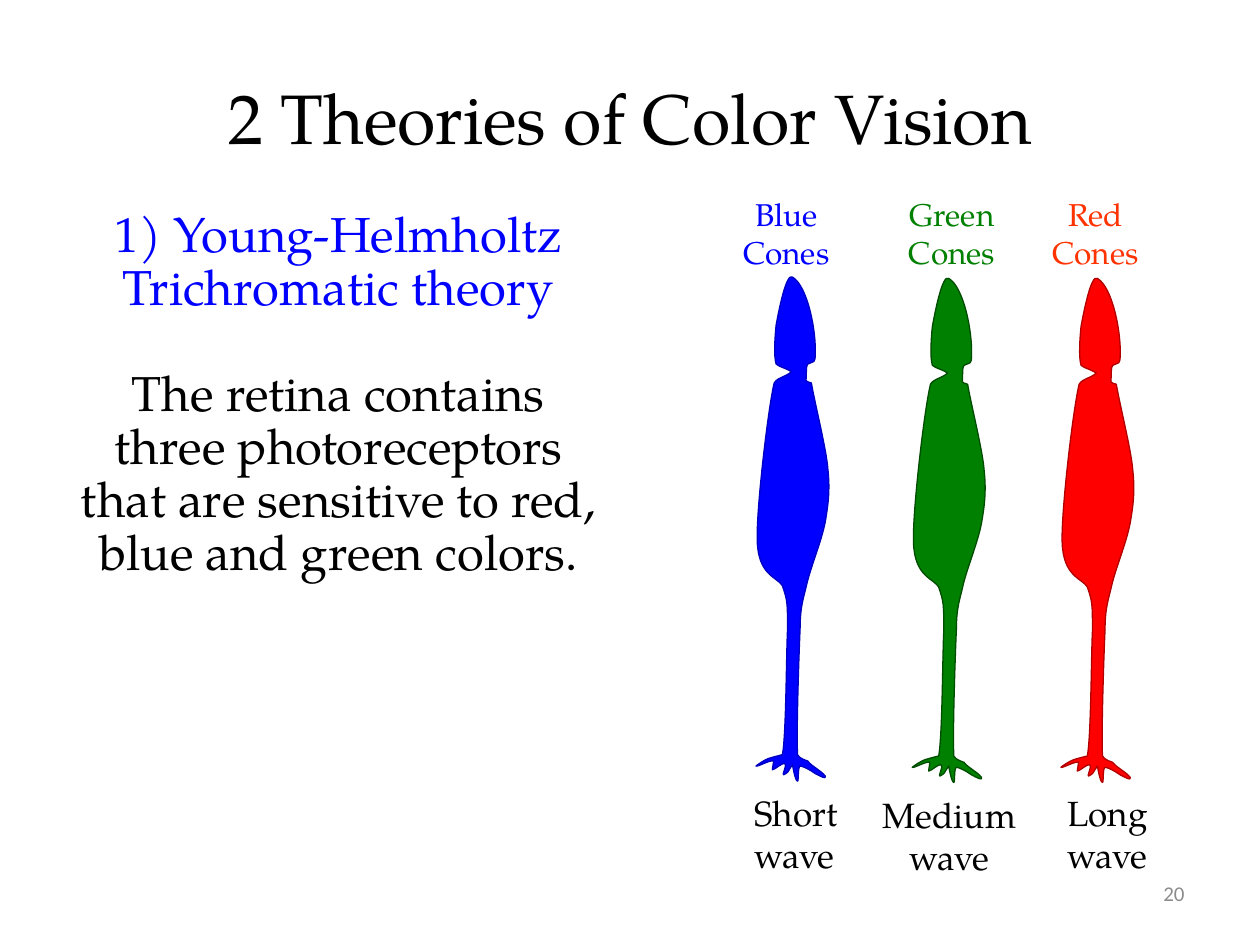
from lxml.etree import SubElement
from pptx import Presentation
from pptx.dml.color import RGBColor
from pptx.enum.text import MSO_ANCHOR, MSO_AUTO_SIZE, PP_ALIGN
from pptx.oxml.ns import qn
from pptx.util import Inches, Pt

UNIT = Inches(0.1)  # one column or row of the 100 x 75 grid

# Cone outline in tenths of a grid unit: a start, then two handles and an end per curve.
CONE_WIDTH, CONE_HEIGHT = 59, 404
CONE_START = (33, 383)
CONE_CURVES = [
    # root
    (34, 386, 41, 388, 41, 388), (45, 393, 51, 395, 55, 400),
    (56, 403, 51, 400, 47, 398), (43, 395, 37, 392, 35, 392),
    (33, 393, 34, 404, 33, 404), (31, 404, 29, 391, 29, 391),
    (24, 398, 27, 396, 22, 399), (20, 400, 25, 391, 23, 390),
    (21, 389, 15, 395, 13, 395), (13, 394, 14, 389, 14, 388),
    (11, 387, 1, 393, 0, 392), (1, 391, 7, 387, 10, 386),
    (13, 385, 21, 383, 21, 383),
    # left side of the stem and body
    (24, 366, 24, 304, 25, 284), (25, 262, 25, 261, 21, 249),
    (17, 242, 2, 241, 1, 214), (0, 191, 9, 113, 14, 90),
    (14, 84, 25, 83, 28, 79),
    # tip
    (21, 75, 20, 76, 16, 73), (14, 67, 15, 51, 16, 42),
    (18, 31, 24, 0, 29, 4), (41, 11, 48, 47, 47, 66),
    (47, 77, 40, 67, 40, 78), (40, 88, 38, 86, 44, 88),
    # right side of the body and stem
    (46, 101, 56, 141, 57, 156), (59, 174, 57, 186, 55, 198),
    (52, 214, 43, 235, 40, 249), (38, 258, 35, 265, 35, 283),
    (34, 306, 32, 365, 33, 383),
]


def color(hex_code):
    return RGBColor.from_string(hex_code)


def grid(*lengths):
    return [round(length * UNIT) for length in lengths]


def set_points(step, coordinates):
    """Replace the points of one outline step by the given x, y, x, y, ..."""
    for point in list(step):
        step.remove(point)
    for x, y in zip(coordinates[::2], coordinates[1::2]):
        SubElement(step, qn("a:pt"), x=str(x), y=str(y))


class ConeSlide:
    font = "TeX Gyre Pagella"
    black, blue, green = "000000", "0000FF", "008000"

    def __init__(self, deck):
        self.slide = deck.slides.add_slide(deck.slide_layouts[6])

    def text(self, box, lines, size, align=PP_ALIGN.CENTER, anchor=MSO_ANCHOR.MIDDLE,
             wrap=True, grow=False, font=None, spacing=None, gap=0):
        """Add a text box; lines holds one (wording, colour) pair per paragraph."""
        frame = self.slide.shapes.add_textbox(*grid(*box)).text_frame
        frame.word_wrap = wrap
        frame.vertical_anchor = anchor
        frame.auto_size = MSO_AUTO_SIZE.SHAPE_TO_FIT_TEXT if grow else MSO_AUTO_SIZE.NONE
        for index, (wording, hue) in enumerate(lines):
            paragraph = frame.add_paragraph() if index else frame.paragraphs[0]
            paragraph.alignment = align
            paragraph.line_spacing = spacing
            if index:
                paragraph.space_before = Pt(gap)
            run = paragraph.add_run()
            run.text = wording
            run.font.name = font or self.font
            run.font.size = Pt(size)
            run.font.color.rgb = color(hue)

    def label(self, box, words, size, hue, align=PP_ALIGN.CENTER):
        self.text(box, [(word, hue) for word in words], size, align,
                  MSO_ANCHOR.TOP, wrap=False, grow=True)

    def cone(self, left, top, fill, outline):
        """Add a cone whose straight steps are turned into Bézier curves."""
        builder = self.slide.shapes.build_freeform(*CONE_START, scale=UNIT / 10)
        builder.add_line_segments([curve[4:] for curve in CONE_CURVES], close=True)
        cone = builder.convert_to_shape()
        contour = next(cone._element.iter(qn("a:path")))
        contour.set("w", str(CONE_WIDTH))
        contour.set("h", str(CONE_HEIGHT))
        set_points(contour.find(qn("a:moveTo")), CONE_START)
        for step, curve in zip(contour.findall(qn("a:lnTo")), CONE_CURVES):
            step.tag = qn("a:cubicBezTo")
            set_points(step, curve)
        cone.left, cone.top, cone.width, cone.height = grid(
            left, top, CONE_WIDTH / 10, CONE_HEIGHT / 10)
        cone.shadow.inherit = False
        cone.fill.solid()
        cone.fill.fore_color.rgb = color(fill)
        cone.line.color.rgb = color(outline)
        cone.line.width = Pt(0.75)


def main():
    deck = Presentation()
    deck.slide_width, deck.slide_height = grid(100, 75)
    page = ConeSlide(deck)

    page.text((5, 3, 90, 12.5), [("2 Theories of Color Vision", page.black)], 40)
    page.text((5, 16, 43.7, 30.8), [
        ("1) Young-Helmholtz Trichromatic theory", page.blue),
        ("The retina contains three photoreceptors that are sensitive to red, "
         "blue and green colors.", page.black),
    ], 28, grow=True, spacing=0.9, gap=30)

    # name, label left, label colour, cone left, cone top, fill, outline
    cones = [
        ("Blue", 57.95, page.blue, 60, 21.6, page.blue, "0000C0"),
        ("Green", 71.1, page.green, 72.4, 21.7, page.green, "004C00"),
        ("Red", 82.5, "FF3300", 84.2, 21.7, "FF0000", "B00000"),
    ]
    for name, label_left, hue, left, top, fill, outline in cones:
        page.label((label_left, 15, 8.9, 7), (name, "Cones"), 18, hue)
        page.cone(left, top, fill, outline)

    waves = [
        ("Short", 58.9, 62.3, 8.6, PP_ALIGN.LEFT),
        ("Medium", 69.05, 62.5, 12.6, PP_ALIGN.CENTER),
        ("Long", 83.6, 62.3, 8.6, PP_ALIGN.CENTER),
    ]
    for length, left, top, width, align in waves:
        page.label((left, top, width, 7.7), (length, "wave"), 20, page.black, align)

    page.text((71.7, 68.3, 23.3, 5.2), [("20", "8C8C8C")], 12,
              PP_ALIGN.RIGHT, font="Calibri")
    deck.save("out.pptx")


if __name__ == "__main__":
    main()
